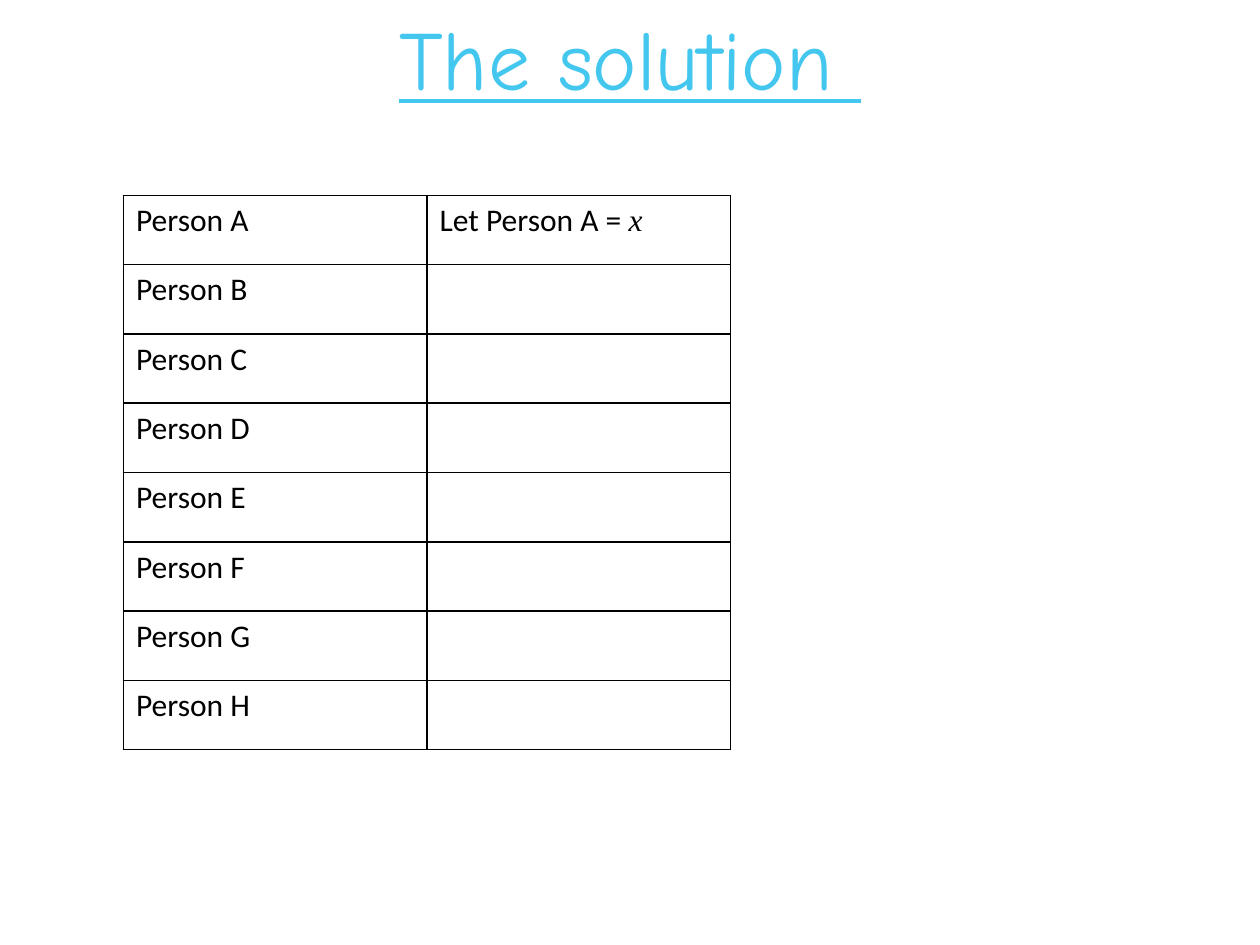
from lxml import etree
from pptx import Presentation
from pptx.dml.color import RGBColor
from pptx.enum.text import MSO_AUTO_SIZE, PP_ALIGN
from pptx.oxml.ns import qn
from pptx.util import Inches, Pt

CENTER = PP_ALIGN.CENTER
GROW = MSO_AUTO_SIZE.SHAPE_TO_FIT_TEXT
BORDER_SIDES = ("a:lnL", "a:lnR", "a:lnT", "a:lnB")


def rgb(value):
    return RGBColor.from_string(value)


class SolutionSlide:
    title_font = "Comic Neue"
    body_font = "Calibri"
    math_font = "Times New Roman"
    accent = "44C7EE"
    ink = "000000"

    def __init__(self, slide):
        self.slide = slide

    def style_run(self, run, font, size, color):
        run.font.name = font
        run.font.size = Pt(size)
        run.font.color.rgb = rgb(color)

    def title(self, text, left, top, width, height):
        heading = self.slide.shapes.add_textbox(
            Inches(left), Inches(top), Inches(width), Inches(height))
        frame = heading.text_frame
        frame.word_wrap = True
        frame.auto_size = GROW
        frame.text = text
        line = frame.paragraphs[0]
        line.alignment = CENTER
        self.style_run(line.runs[0], self.title_font, 48, self.accent)
        line.runs[0].font.underline = True

    def border(self, cell):
        """Draw a thin solid line on all four sides of a cell."""
        properties = cell._tc.get_or_add_tcPr()
        for position, side in enumerate(BORDER_SIDES):
            line = etree.Element(qn(side), w=str(Pt(1)))
            fill = etree.SubElement(line, qn("a:solidFill"))
            etree.SubElement(fill, qn("a:srgbClr"), val=self.ink)
            properties.insert(position, line)

    def table(self, rows, left, top, column_width, row_height):
        column_count = len(rows[0])
        grid = self.slide.shapes.add_table(
            len(rows), column_count, Inches(left), Inches(top),
            Inches(column_width * column_count),
            Inches(row_height * len(rows))).table
        grid.first_row = False
        grid.horz_banding = False
        for column in grid.columns:
            column.width = Inches(column_width)
        for row_index, texts in enumerate(rows):
            grid.rows[row_index].height = Inches(row_height)
            for column_index, text in enumerate(texts):
                cell = grid.cell(row_index, column_index)
                cell.fill.background()
                self.border(cell)
                cell.text_frame.text = text
                for run in cell.text_frame.paragraphs[0].runs:
                    self.style_run(run, self.body_font, 18, self.ink)
        return grid

    def add_variable(self, cell, name):
        """Append an italic mathematical variable to a cell's text."""
        variable = cell.text_frame.paragraphs[0].add_run()
        variable.text = name
        self.style_run(variable, self.math_font, 18, self.ink)
        variable.font.italic = True


def main():
    deck = Presentation()
    deck.slide_width = Inches(10)
    deck.slide_height = Inches(7.5)
    solution = SolutionSlide(deck.slides.add_slide(deck.slide_layouts[6]))

    solution.title("The solution ", 0, 0, 10, 0.9)
    people = [[f"Person {letter}", ""] for letter in "ABCDEFGH"]
    people[0][1] = "Let Person A = "
    working = solution.table(people, 0.98, 1.55, 2.41, 0.55)
    solution.add_variable(working.cell(0, 1), "x")

    deck.save("out.pptx")


if __name__ == "__main__":
    main()
